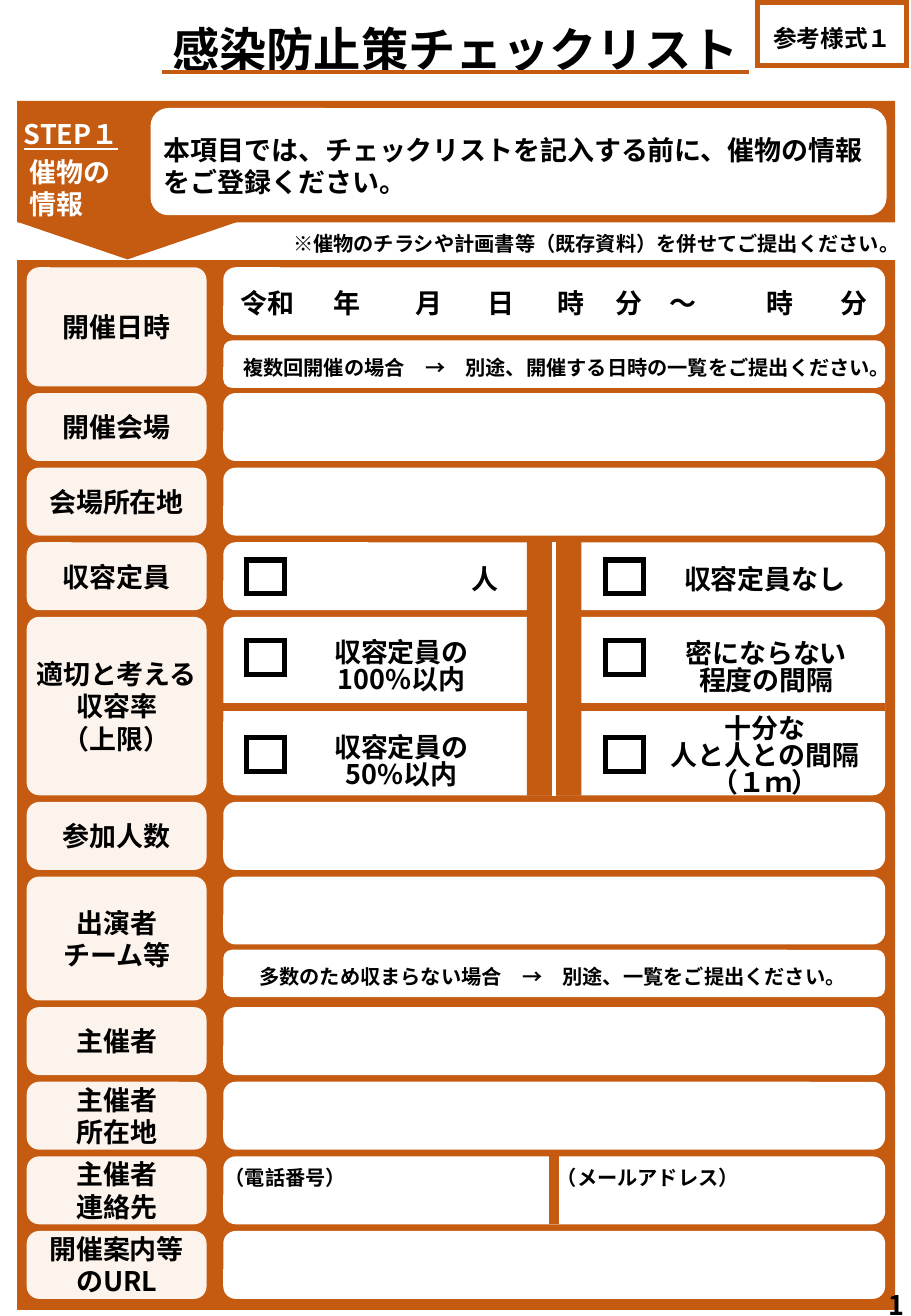
from dataclasses import dataclass

from lxml import etree
from pptx import Presentation
from pptx.dml.color import RGBColor
from pptx.enum import shapes, text
from pptx.oxml.ns import qn
from pptx.util import Cm, Pt

HUES = {"rust": "C55A11", "cream": "FDF3ED", "white": "FFFFFF", "black": "000000"}
FONT = "Noto Sans CJK JP"
KIND = shapes.MSO_SHAPE
SIDE = text.PP_ALIGN


@dataclass
class Row:
    label: str
    high: float = 1.42
    note: bool = False
    pad: float = 0.18


@dataclass
class Note:
    words: str
    x: float
    y: float
    wide: float = 2.26
    high: float = 0.76
    size: float = 16
    align: SIDE = SIDE.CENTER


@dataclass
class Line:
    x1: float
    y1: float
    x2: float
    y2: float
    hue: str
    thick: float


# Page with sides of 9 to 13
WIDE = 19.05
deck = Presentation()
deck.slide_width, deck.slide_height = Cm(WIDE), Cm(WIDE * 13 / 9)
slide = deck.slides.add_slide(deck.slide_layouts[6])


def hue(name: str) -> RGBColor:
    return RGBColor.from_string(HUES[name])


def write(frame, words: str, *, size: float = 16, color: str = "black",
          align: SIDE = SIDE.LEFT, pitch: float | None = None,
          under: bool = False, lead: float = 0) -> None:
    """Fill a frame, one paragraph a line; under and lead style the first line."""
    frame.word_wrap = True
    for i, part in enumerate(words.split("\n")):
        para = frame.add_paragraph() if i else frame.paragraphs[0]
        para.alignment = align
        if pitch:
            para.line_spacing = Pt(pitch)
        if lead and i == 0:
            para.space_after = Pt(lead)
        run = para.add_run()
        run.text = part
        font = run.font
        font.size, font.bold, font.name = Pt(size), True, FONT
        font.color.rgb = hue(color)
        font.underline = under and i == 0
        etree.SubElement(run._r.get_or_add_rPr(), qn("a:ea"), typeface=FONT)


def label(x: float, y: float, wide: float, high: float, words: str, **style) -> None:
    box = slide.shapes.add_textbox(Cm(x), Cm(y), Cm(wide), Cm(high))
    write(box.text_frame, words, **style)


def block(x: float, y: float, wide: float, high: float, fill: str | None = None,
          edge: str | None = None, thick: float = 3, curve: float = 0,
          kind: KIND = KIND.RECTANGLE):
    if curve:
        kind = KIND.ROUNDED_RECTANGLE
    box = slide.shapes.add_shape(kind, Cm(x), Cm(y), Cm(wide), Cm(high))
    box.shadow.inherit = False
    if curve:
        box.adjustments[0] = curve / min(wide, high)
    if fill:
        box.fill.solid()
        box.fill.fore_color.rgb = hue(fill)
    else:
        box.fill.background()
    if edge:
        box.line.color.rgb = hue(edge)
        box.line.width = Pt(thick)
        rim = box.element.spPr.find(qn("a:ln"))
        etree.SubElement(rim, qn("a:miter"), lim="800000")
    else:
        box.line.fill.background()
    return box


def draw(line: Line) -> None:
    rule = slide.shapes.add_connector(shapes.MSO_CONNECTOR.STRAIGHT, Cm(line.x1),
                                      Cm(line.y1), Cm(line.x2), Cm(line.y2))
    rule.line.color.rgb = hue(line.hue)
    rule.line.width = Pt(line.thick)
    etree.SubElement(rule.element.spPr, qn("a:effectLst"))


# Step banner
block(1.88, 2.34, 1.57, 4.6, "rust", kind=KIND.PENTAGON).rotation = 90
block(0.36, 2.11, 18.36, 2.54, "rust")
block(3.15, 2.26, 15.39, 2.24, "white", curve=0.37)
label(0.25, 2.34, 3.02, 2.44, "STEP１\n 催物の\n 情報", color="white",
      under=True, lead=3)
label(3.18, 2.67, 15.6, 1.63,
      "本項目では、チェックリストを記入する前に、催物の情報をご登録ください。")

# Title and form tag
label(1.22, 0.3, 16.61, 1.45, "感染防止策チェックリスト", size=28, align=SIDE.CENTER)
draw(Line(3.38, 1.5, 15.67, 1.5, "rust", 2.25))
label(15.34, 0.38, 4.14, 0.86, "参考様式１", size=14, align=SIDE.CENTER)
block(15.85, 0.05, 3.1, 1.32, edge="rust")

# Form rows
ROWS = [
    Row("開催日時", 2.49, note=True), Row("開催会場"), Row("会場所在地"),
    Row("収容定員"), Row("適切と考える\n収容率\n（上限）", 3.73, pad=0),
    Row("参加人数"), Row("出演者\nチーム等", 2.59, note=True), Row("主催者"),
    Row("主催者\n所在地"), Row("主催者\n連絡先"), Row("開催案内等のURL"),
]
GAP, BASE, SLIP = 0.14, 1.42, 0.99
block(0.36, 5.44, 18.36, 21.95, "rust")
top = 5.59
for row in ROWS:
    head = block(0.56, top, 3.76, row.high, "cream", curve=0.26)
    frame = head.text_frame
    frame.vertical_anchor = text.MSO_ANCHOR.MIDDLE
    frame.margin_left = frame.margin_right = Cm(row.pad)
    frame.margin_top = frame.margin_bottom = Cm(0.1)
    write(frame, row.label, align=SIDE.CENTER)
    block(4.67, top, 13.84, BASE if row.note else row.high, "white", curve=0.26)
    if row.note:
        block(4.67, top + BASE + 0.11, 13.84, SLIP, "white", curve=0.18)
    top += row.high + GAP

# Dividers
draw(Line(4.67, 14.78, 18.51, 14.78, "rust", 4.5))
draw(Line(11.58, 24.18, 11.58, 25.6, "rust", 6))
block(11.02, 11.33, 1.14, 5.31, "rust")
draw(Line(11.58, 11.33, 11.58, 16.64, "white", 2.25))

# Tick boxes
for y in (11.71, 13.39, 15.42):
    for x in (5.16, 12.67):
        block(x, y, 0.79, 0.71, edge="black")

# Words in the fields
DATES = [("令和", 5.6), ("年", 7.25), ("月", 8.98), ("日", 10.48), ("時", 11.95),
         ("時", 16.32), ("分", 17.86)]
NOTES = [Note(words, mid - 1.13, 5.99) for words, mid in DATES] + [
    Note("分　～　", 12.32, 5.99, 3.35),
    Note("複数回開催の場合　→　別途、開催する日時の一覧をご提出ください。",
         4.8, 7.24, 13.69, size=12),
    Note("人", 9.02, 11.76),
    Note("収容定員なし", 13.94, 11.76, 4.11),
    Note("収容定員の\n100%以内", 5.69, 13.28, 5.41, 1.27),
    Note("密にならない程度の間隔", 13.97, 13.3, 4.11, 1.27),
    Note("収容定員の\n50%以内", 5.69, 15.27, 5.41, 1.27),
    Note("十分な\n人と人との間隔\n（１ｍ）", 13.46, 14.86, 5.08, 1.73),
    Note("多数のため収まらない場合　→　別途、一覧をご提出ください。",
         5.03, 19.99, 13.06, size=12),
    Note("（電話番号）", 4.27, 24.18, 3.4, size=12),
    Note("（メールアドレス）", 11.38, 24.18, 4.34, size=12),
    Note("※催物のチラシや計画書等（既存資料）を併せてご提出ください。",
         5.38, 4.65, 13.69, size=12, align=SIDE.RIGHT),
]
for note in NOTES:
    label(note.x, note.y, note.wide, note.high, note.words, size=note.size,
          align=note.align, pitch=16)

# Page number
label(18.34, 26.82, 1.5, 0.94, "1")

deck.save("out.pptx")
